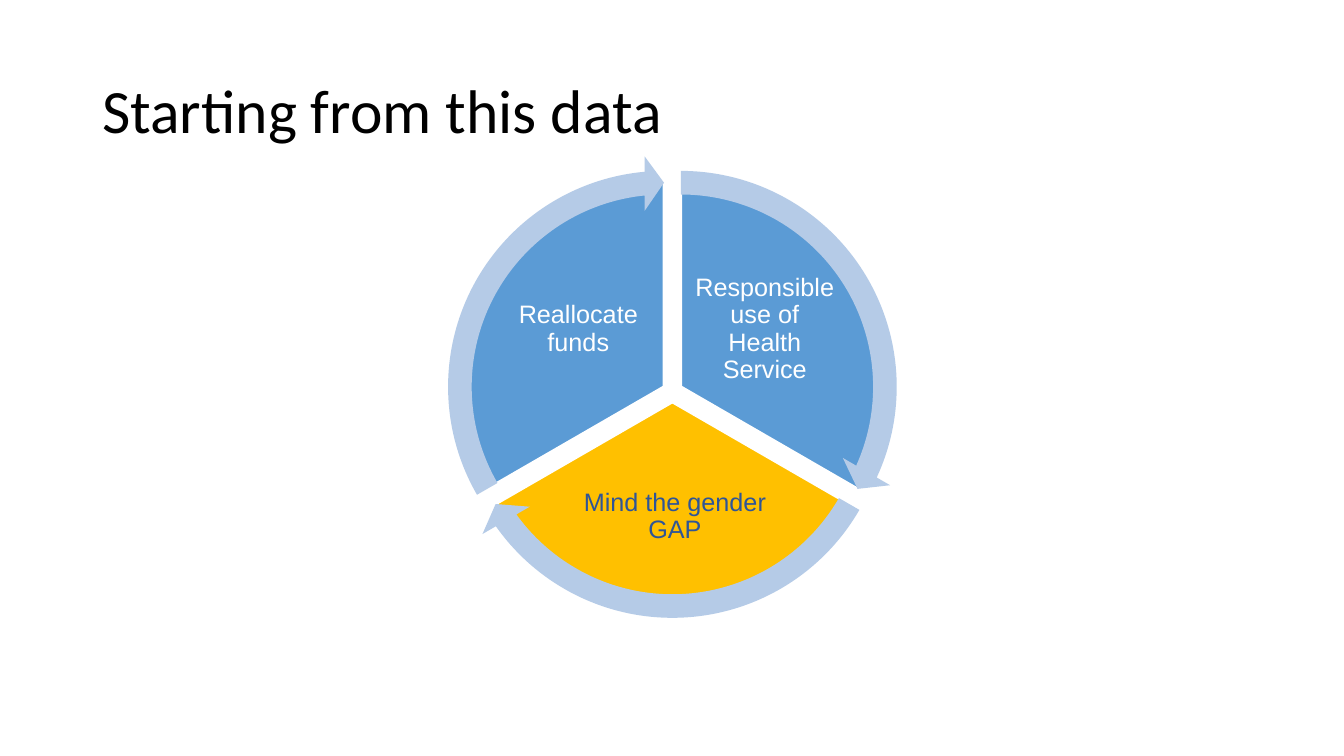
import pptx
import pptx.util
import pptx.dml.color
import pptx.enum.shapes
import pptx.enum.text

RGBColor = pptx.dml.color.RGBColor
SHAPE = pptx.enum.shapes.MSO_SHAPE
ALIGN = pptx.enum.text.PP_ALIGN

BLACK = RGBColor(0x00, 0x00, 0x00)
WHITE = RGBColor(0xFF, 0xFF, 0xFF)
BLUE = RGBColor(0x5B, 0x9B, 0xD5)
GOLD = RGBColor(0xFF, 0xC0, 0x00)
NAVY = RGBColor(0x2F, 0x55, 0x97)
PALE = RGBColor(0xB5, 0xCB, 0xE7)

COLS, ROWS = 160, 90
PIE_SIZE, RING_SIZE = 49.1, 55.1
TURN, SWEEP = 216, 72
HEAD = 3.275


class Deck:
    def __init__(self):
        self.show = pptx.Presentation()
        self.show.slide_width = pptx.util.Inches(13.3333)
        self.show.slide_height = pptx.util.Inches(7.5)
        self.slide = self.show.slides.add_slide(self.show.slide_layouts[6])

    def place(self, col, row, wide, high):
        cell_x = self.show.slide_width / COLS
        cell_y = self.show.slide_height / ROWS
        return [round(n) for n in (col * cell_x, row * cell_y, wide * cell_x, high * cell_y)]

    def text(self, words, box, font, size, color, align, pad):
        frame = self.slide.shapes.add_textbox(*self.place(*box)).text_frame
        frame.word_wrap = True
        frame.vertical_anchor = pptx.enum.text.MSO_ANCHOR.MIDDLE
        frame.margin_left = frame.margin_right = pptx.util.Inches(pad[0])
        frame.margin_top = frame.margin_bottom = pptx.util.Inches(pad[1])
        frame.text = words
        line = frame.paragraphs[0]
        line.alignment = align
        line.line_spacing = 0.9
        for run in line.runs:
            run.font.name = font
            run.font.size = pptx.util.Pt(size)
            run.font.color.rgb = color

    def title(self, words):
        self.text(words, (11, 4.8, 138, 17.4), "Calibri", 44, BLACK, ALIGN.LEFT, (0.1, 0.05))

    def label(self, words, box, color):
        self.text(words, box, "Arial", 18, color, ALIGN.CENTER, (0.03, 0.03))

    def shape(self, kind, col, row, size, fill, turns):
        shape = self.slide.shapes.add_shape(kind, *self.place(col, row, size, size))
        shape.shadow.inherit = False
        shape.fill.solid()
        shape.fill.fore_color.rgb = fill
        shape.line.fill.background()
        for i, turn in enumerate(turns):
            shape.adjustments[i] = turn
        return shape

    def sector(self, col, row, start, fill):
        end = (start + SWEEP) % TURN
        pie = self.shape(SHAPE.PIE, col, row, PIE_SIZE, fill, (start, end))
        pie.line.color.rgb = WHITE
        pie.line.width = pptx.util.Pt(2)

    def arrow(self, col, row, start):
        tip = (start + SWEEP) % TURN - HEAD
        shift = (RING_SIZE - PIE_SIZE) / 2
        self.shape(SHAPE.CIRCULAR_ARROW, col - shift, row - shift, RING_SIZE, PALE,
                   (0.051, HEAD, tip, start, 0.059))


def main():
    deck = Deck()
    deck.title("Starting from this data")
    parts = [
        (56.5, 21.5, 162, BLUE, "Responsible use of Health Service", (82.3, 31.9, 17.5, 14.6), WHITE),
        (55.5, 23.3, 18, GOLD, "Mind the gender GAP", (67.2, 55.1, 26.3, 12.8), NAVY),
        (54.5, 21.5, 90, BLUE, "Reallocate funds", (60.1, 31.9, 17.5, 14.6), WHITE),
    ]
    for col, row, start, fill, words, box, color in parts:
        deck.sector(col, row, start, fill)
        deck.label(words, box, color)
    for col, row, start, *rest in parts:
        deck.arrow(col, row, start)
    deck.show.save("out.pptx")


if __name__ == "__main__":
    main()
